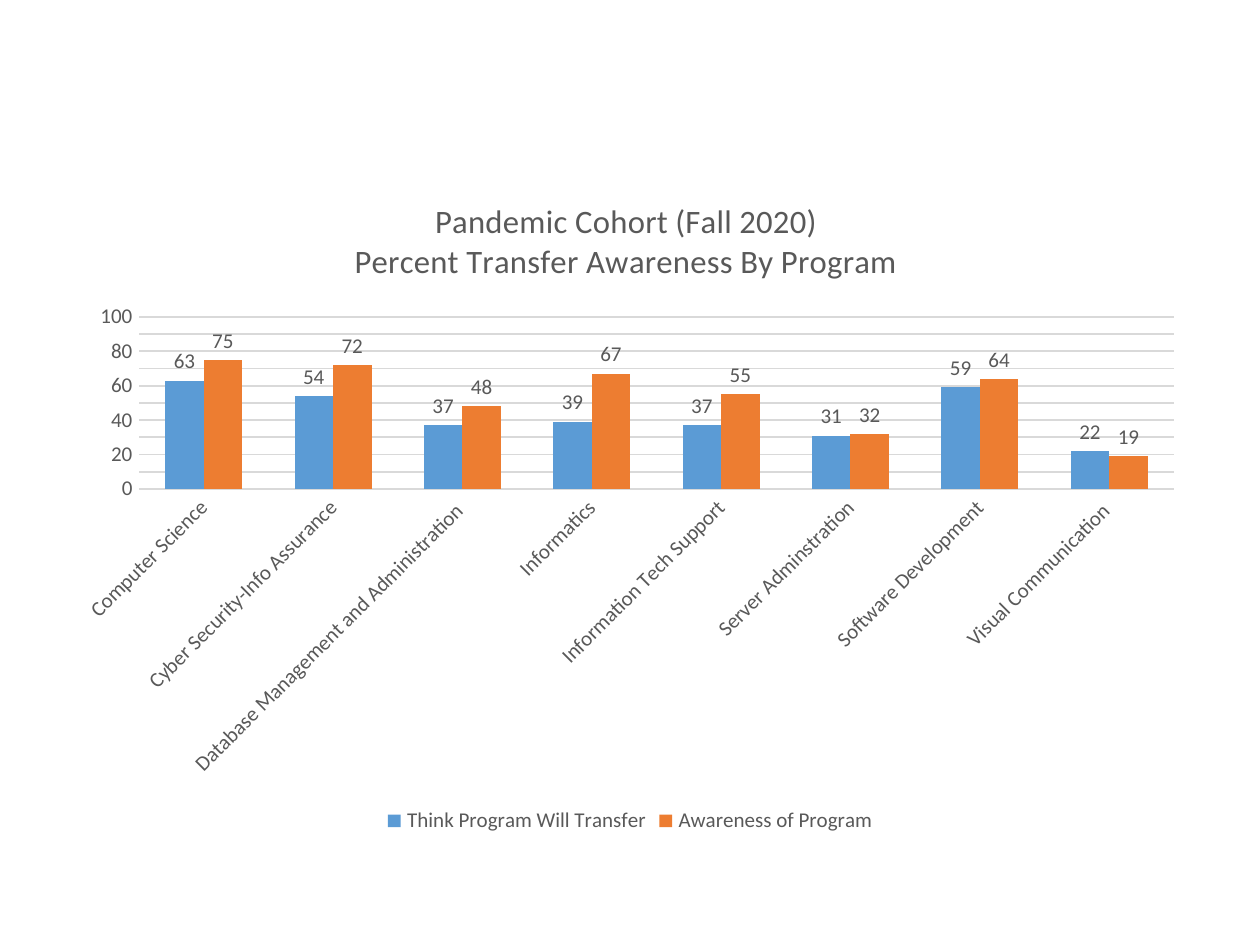
"""Build a slide with a clustered column chart of transfer awareness by program."""
from dataclasses import dataclass
from typing import Any

from lxml import etree
from pptx import Presentation
from pptx import util as u
from pptx.chart.data import CategoryChartData
from pptx.dml.color import RGBColor
from pptx.enum import chart as charts
from pptx.oxml import ns

PX = 914400 / 168


@dataclass(frozen=True)
class Theme:
    font: str = "Calibri"
    text: str = "595959"
    grid: str = "D9D9D9"
    thinking: str = "5B9BD5"
    awareness: str = "ED7D31"
    title_size: int = 14
    label_size: int = 9
    line_width: float = 0.75


@dataclass(frozen=True)
class Measure:
    name: str
    values: tuple[int, ...]
    color: str


@dataclass(frozen=True)
class Box:
    left: int
    top: int
    width: int
    height: int

    def emu(self) -> tuple[u.Emu, ...]:
        return tuple(px(n) for n in (self.left, self.top, self.width, self.height))


THEME = Theme()
SLIDE = Box(0, 0, 1260, 945)
CHART = Box(63, 171, 1134, 669)
PLOT = Box(76, 146, 1035, 172)
TITLE = ("Pandemic Cohort (Fall 2020) ", "Percent Transfer Awareness By Program ")
PROGRAMS = (
    "Computer Science",
    "Cyber Security-Info Assurance",
    "Database Management and Administration ",
    "Informatics",
    "Information Tech Support",
    "Server Adminstration",
    "Software Development",
    "Visual Communication ",
)
MEASURES = (
    Measure("Think Program Will Transfer", (63, 54, 37, 39, 37, 31, 59, 22), THEME.thinking),
    Measure("Awareness of Program", (75, 72, 48, 67, 55, 32, 64, 19), THEME.awareness),
)


def px(length: int) -> u.Emu:
    return u.Emu(round(length * PX))


def apply(target: Any, values: dict[str, Any]) -> None:
    for name, value in values.items():
        setattr(target, name, value)


def style_font(font: Any, size: int = THEME.label_size) -> None:
    apply(font, {"name": THEME.font, "size": u.Pt(size), "bold": False})
    font.color.rgb = RGBColor.from_string(THEME.text)


def style_line(line: Any) -> None:
    line.color.rgb = RGBColor.from_string(THEME.grid)
    line.width = u.Pt(THEME.line_width)


def add_title(chart: Any) -> None:
    frame = chart.chart_title.text_frame
    for index, wording in enumerate(TITLE):
        paragraph = frame.add_paragraph() if index else frame.paragraphs[0]
        run = paragraph.add_run()
        run.text = wording
        style_font(run.font, THEME.title_size)
    chart.chart_title.include_in_layout = False


def style_axes(chart: Any) -> None:
    no_ticks = {
        "major_tick_mark": charts.XL_TICK_MARK.NONE,
        "minor_tick_mark": charts.XL_TICK_MARK.NONE,
    }
    for axis in (chart.category_axis, chart.value_axis):
        apply(axis, no_ticks)
        style_font(axis.tick_labels.font)
    style_line(chart.category_axis.format.line)
    properties = chart.category_axis.tick_labels.font._element.getparent().getparent().getparent()
    properties.find(ns.qn("a:bodyPr")).set("rot", "-2700000")
    apply(chart.value_axis, {"minimum_scale": 0, "maximum_scale": 100, "major_unit": 10})
    chart.value_axis.format.line.fill.background()
    style_line(chart.value_axis.major_gridlines.format.line)


def style_columns(plot: Any) -> None:
    apply(plot, {"gap_width": 136, "overlap": 0, "vary_by_categories": False})
    for series, measure in zip(plot.series, MEASURES):
        series.format.fill.solid()
        series.format.fill.fore_color.rgb = RGBColor.from_string(measure.color)
        labels = series.data_labels
        apply(labels, {
            "show_value": True,
            "number_format": "0",
            "number_format_is_linked": False,
            "position": charts.XL_LABEL_POSITION.OUTSIDE_END,
        })
        style_font(labels.font)


def place_plot(chart: Any) -> None:
    area = chart._chartSpace.find(".//" + ns.qn("c:plotArea"))
    for old in area.findall(ns.qn("c:layout")):
        area.remove(old)
    layout = etree.Element(ns.qn("c:layout"))
    manual = etree.SubElement(layout, ns.qn("c:manualLayout"))
    settings = {
        "layoutTarget": "inner",
        "xMode": "edge",
        "yMode": "edge",
        "x": PLOT.left / CHART.width,
        "y": PLOT.top / CHART.height,
        "w": PLOT.width / CHART.width,
        "h": PLOT.height / CHART.height,
    }
    for name, value in settings.items():
        etree.SubElement(manual, ns.qn(f"c:{name}")).set("val", str(value))
    area.insert(0, layout)


def add_awareness_chart(slide: Any) -> None:
    data = CategoryChartData(number_format="General")
    data.categories = PROGRAMS
    for measure in MEASURES:
        data.add_series(measure.name, measure.values)
    kind = charts.XL_CHART_TYPE.COLUMN_CLUSTERED
    chart = slide.shapes.add_chart(kind, *CHART.emu(), data).chart
    style_font(chart.font)
    add_title(chart)
    style_axes(chart)
    style_columns(chart.plots[0])
    place_plot(chart)
    chart.has_legend = True
    apply(chart.legend, {
        "position": charts.XL_LEGEND_POSITION.BOTTOM,
        "include_in_layout": False,
    })
    style_font(chart.legend.font)


def main() -> None:
    presentation = Presentation()
    apply(presentation, {"slide_width": px(SLIDE.width), "slide_height": px(SLIDE.height)})
    slide = presentation.slides.add_slide(presentation.slide_layouts[6])
    add_awareness_chart(slide)
    presentation.save("out.pptx")


if __name__ == "__main__":
    main()
